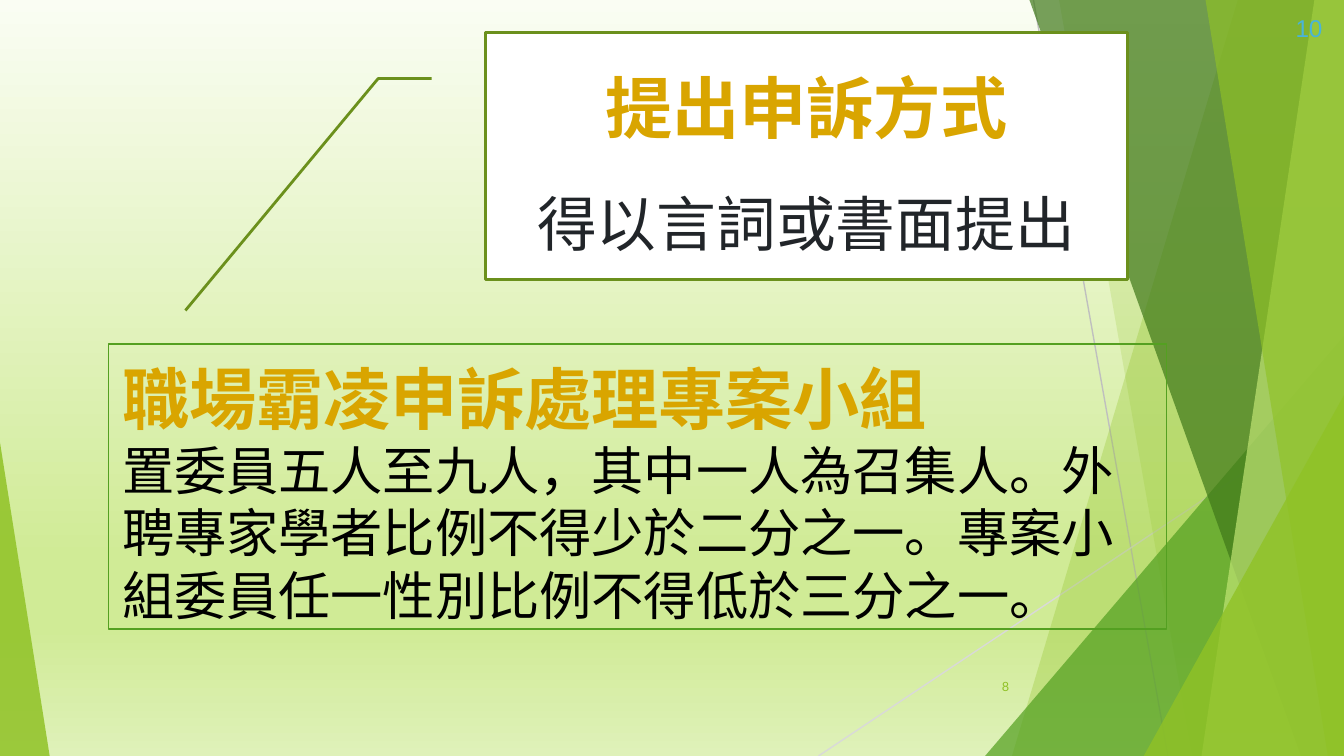
from dataclasses import dataclass
from typing import NamedTuple, Optional

from lxml.etree import SubElement
from pptx import Presentation
from pptx.dml.color import RGBColor
from pptx.enum.shapes import MSO_CONNECTOR, MSO_SHAPE
from pptx.enum.text import MSO_ANCHOR, PP_ALIGN
from pptx.oxml.ns import qn
from pptx.util import Inches, Pt


@dataclass(frozen=True)
class Theme:
    lime: str = "90C226"
    green: str = "54A021"
    forest: str = "3F7819"
    pale: str = "C0E474"
    olive: str = "6B901C"
    gold: str = "D9A500"
    ink: str = "212529"
    black: str = "000000"
    white: str = "FFFFFF"
    sky: str = "49B4D8"
    background: tuple = ((0, "FAFDF3"), (74, "D0EB96"), (83, "D0EB96"), (100, "DFF1B9"))
    title_size: float = 36
    callout_size: float = 32
    body_size: float = 28
    number_size: float = 13
    footer_size: float = 6.8
    title_font: str = "Noto Sans CJK SC"
    body_font: str = "Noto Sans CJK TC"


THEME = Theme()
WIDTH, HEIGHT = Inches(10), Inches(5.625)
COLUMNS, ROWS = 100, 56.25
CELL = WIDTH / COLUMNS


class Area(NamedTuple):
    """Left, top, width and height in grid cells."""
    left: float
    top: float
    width: float
    height: float


class Ray(NamedTuple):
    start: tuple
    end: tuple
    color: str


class Band(NamedTuple):
    """A facet running from the top edge to the bottom edge, closed by the right edge."""
    top_column: float
    bottom_column: float
    color: str
    opacity: int


class Corner(NamedTuple):
    """A right triangle whose apex stands at one side of its area."""
    area: Area
    apex: float
    color: str
    opacity: int


class Line(NamedTuple):
    text: str
    size: float
    color: str
    font: str
    bold: bool = False
    leading: Optional[float] = None
    before: float = 0
    tracking: float = 0
    align: PP_ALIGN = PP_ALIGN.LEFT


RAYS = (
    Ray((76.9, 0), (86.9, ROWS), "BFBFBF"),
    Ray((COLUMNS, 30.2), (60.9, ROWS), "D9D9D9"),
)
FACETS = (
    Band(92.1, 75.3, THEME.lime, 30),
    Band(78.8, 88.7, THEME.lime, 20),
    Corner(Area(73.3, 25, 26.7, 31.25), 1, THEME.green, 72),
    Band(76.6, 96.8, THEME.forest, 70),
    Band(97.8, 89.4, THEME.pale, 70),
    Band(89.7, 98.8, THEME.lime, 65),
    Corner(Area(85.1, 29.4, 14.9, 26.85), 1, THEME.lime, 80),
    Corner(Area(0, 32.9, 3.7, 23.35), 0, THEME.lime, 85),
)
TEAM = (
    Line("職場霸凌申訴處理專案小組", THEME.title_size, THEME.gold, THEME.title_font,
         bold=True, leading=47, tracking=-0.1),
    Line("置委員五人至九人，其中一人為召集人。外聘專家學者比例不得少於二分之一。"
         "專案小組委員任一性別比例不得低於三分之一。",
         THEME.body_size, THEME.black, THEME.body_font, leading=33.5),
)
METHOD = (
    Line("提出申訴方式", THEME.title_size, THEME.gold, THEME.title_font,
         bold=True, leading=50, tracking=-0.1, align=PP_ALIGN.CENTER),
    Line("得以言詞或書面提出", THEME.callout_size, THEME.ink, THEME.body_font,
         leading=46, before=14, align=PP_ALIGN.CENTER),
)
PAGE_NUMBER = Line("10", THEME.number_size, THEME.sky, "Arial", tracking=-0.1)
FOOTER_NUMBER = Line("8", THEME.footer_size, THEME.lime, "Lato", align=PP_ALIGN.RIGHT)


def cells(*values: float) -> list[int]:
    return [round(value * CELL) for value in values]


def paint_background(slide) -> None:
    fill = slide.background.fill
    fill.gradient()
    fill.gradient_angle = 270
    stops = slide.element.find(".//" + qn("a:gsLst"))
    for stop in list(stops):
        stops.remove(stop)
    for position, color in THEME.background:
        stop = SubElement(stops, qn("a:gs"), pos=str(position * 1000))
        SubElement(stop, qn("a:srgbClr"), val=color)


def draw_ray(slide, ray: Ray) -> None:
    connector = slide.shapes.add_connector(MSO_CONNECTOR.STRAIGHT, *cells(*ray.start, *ray.end))
    connector.line.color.rgb = RGBColor.from_string(ray.color)
    connector.line.width = Pt(0.75)
    SubElement(connector.element.spPr, qn("a:effectLst"))


def draw_facet(slide, facet: Band | Corner) -> None:
    if isinstance(facet, Band):
        top_left, top_right, bottom_right, bottom_left = (
            cells(facet.top_column, 0), cells(COLUMNS, 0),
            cells(COLUMNS, ROWS), cells(facet.bottom_column, ROWS))
        builder = slide.shapes.build_freeform(*top_left, scale=1.0)
        builder.add_line_segments([top_right, bottom_right, bottom_left], close=True)
        shape = builder.convert_to_shape()
    else:
        shape = slide.shapes.add_shape(MSO_SHAPE.ISOSCELES_TRIANGLE, *cells(*facet.area))
        shape.adjustments[0] = facet.apex
    shape.shadow.inherit = False
    shape.line.fill.background()
    shape.fill.solid()
    shape.fill.fore_color.rgb = RGBColor.from_string(facet.color)
    color = shape.element.spPr.find(qn("a:solidFill"))[0]
    SubElement(color, qn("a:alpha"), val=str(facet.opacity * 1000))


def write(frame, lines: tuple, anchor: MSO_ANCHOR) -> None:
    frame.word_wrap = True
    frame.vertical_anchor = anchor
    for index, line in enumerate(lines):
        para = frame.add_paragraph() if index else frame.paragraphs[0]
        para.text = line.text
        para.alignment = line.align
        para.space_before = Pt(line.before)
        if line.leading:
            para.line_spacing = Pt(line.leading)
        font = para.font
        font.name, font.size, font.bold = line.font, Pt(line.size), line.bold
        font.color.rgb = RGBColor.from_string(line.color)
        defaults = para._p.pPr.find(qn("a:defRPr"))
        defaults.set("spc", str(round(line.tracking * 100)))
        SubElement(defaults, qn("a:ea"), typeface=line.font)


def draw_panel(slide, kind: MSO_SHAPE, area: Area, lines: tuple, border: str,
               border_width: float, fill: Optional[str], anchor: MSO_ANCHOR) -> None:
    panel = slide.shapes.add_shape(kind, *cells(*area))
    panel.shadow.inherit = False
    panel.line.color.rgb = RGBColor.from_string(border)
    panel.line.width = Pt(border_width)
    if fill:
        panel.fill.solid()
        panel.fill.fore_color.rgb = RGBColor.from_string(fill)
    else:
        panel.fill.background()
    write(panel.text_frame, lines, anchor)


def draw_number(slide, area: Area, line: Line, anchor: MSO_ANCHOR) -> None:
    frame = slide.shapes.add_textbox(*cells(*area)).text_frame
    frame.margin_left = frame.margin_right = frame.margin_top = frame.margin_bottom = 0
    write(frame, (line,), anchor)


def main() -> None:
    deck = Presentation()
    deck.slide_width, deck.slide_height = WIDTH, HEIGHT
    slide = deck.slides.add_slide(deck.slide_layouts[6])
    paint_background(slide)
    for ray in RAYS:
        draw_ray(slide, ray)
    for facet in FACETS:
        draw_facet(slide, facet)
    draw_panel(slide, MSO_SHAPE.RECTANGLE, Area(8.1, 25.6, 78.7, 21.2), TEAM,
               THEME.green, 0.75, None, MSO_ANCHOR.TOP)
    draw_panel(slide, MSO_SHAPE.LINE_CALLOUT_2, Area(36.1, 2.4, 47.8, 18.4), METHOD,
               THEME.olive, 1.5, THEME.white, MSO_ANCHOR.MIDDLE)
    draw_number(slide, Area(96.4, 1, 2.4, 2.2), PAGE_NUMBER, MSO_ANCHOR.TOP)
    draw_number(slide, Area(70.5, 49.6, 4.6, 3), FOOTER_NUMBER, MSO_ANCHOR.MIDDLE)
    deck.save("out.pptx")


if __name__ == "__main__":
    main()
